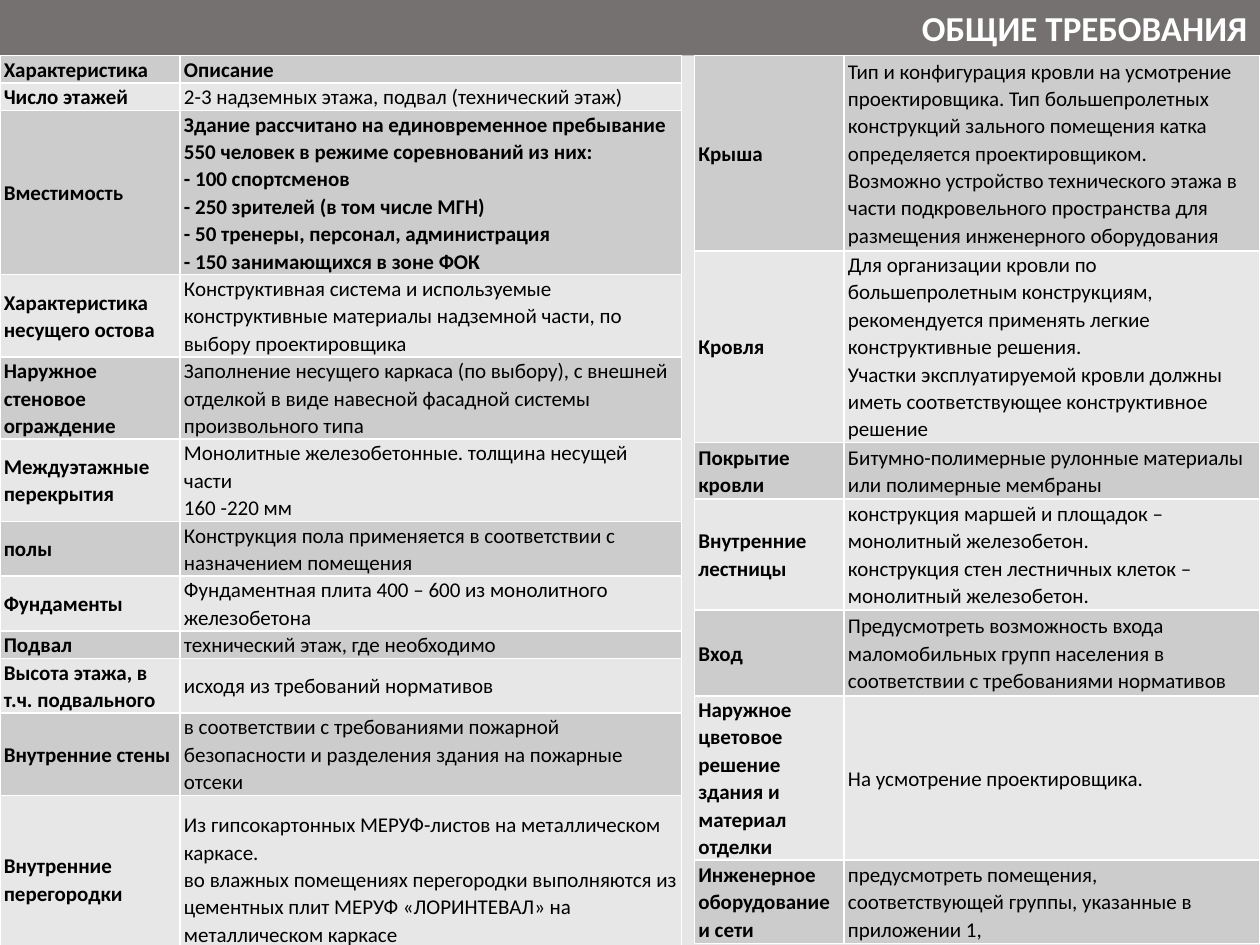
import pptx
import pptx.util
import pptx.dml.color
import pptx.enum.shapes
import pptx.enum.text
import pptx.oxml
import pptx.oxml.ns

Pt = pptx.util.Pt
COLORS = {
    "page": "E7E6E6",
    "banner": "767171",
    "dark_band": "CCCCCC",
    "light_band": "E7E7E7",
    "text": "000000",
    "white": "FFFFFF",
}
LINE = 15.4
TOP = 31.7

BUILDING_ROWS = [
    (1, "Характеристика", "Описание"),
    (1, "Число этажей", "2-3 надземных этажа, подвал (технический этаж)"),
    (6, "Вместимость",
     "Здание рассчитано на единовременное пребывание 550 человек в режиме соревнований из них:\n"
     "- 100 спортсменов\n"
     "- 250 зрителей (в том числе МГН)\n"
     "- 50 тренеры, персонал, администрация\n"
     "- 150 занимающихся в зоне ФОК"),
    (3, "Характеристика несущего остова",
     "Конструктивная система и используемые конструктивные материалы надземной части, "
     "по выбору проектировщика"),
    (3, "Наружное стеновое ограждение",
     "Заполнение несущего каркаса (по выбору), с внешней отделкой в виде навесной "
     "фасадной системы произвольного типа"),
    (3, "Междуэтажные перекрытия",
     "Монолитные железобетонные. толщина несущей части\n160 -220 мм"),
    (2, "полы", "Конструкция пола применяется в соответствии с назначением помещения"),
    (2, "Фундаменты", "Фундаментная плита 400 – 600 из монолитного железобетона"),
    (1, "Подвал", "технический этаж, где необходимо"),
    (2, "Высота этажа, в т.ч. подвального", "исходя из требований нормативов"),
    (3, "Внутренние стены",
     "в соответствии с требованиями пожарной безопасности и разделения здания "
     "на пожарные отсеки"),
    (6.25, "Внутренние перегородки",
     "Из гипсокартонных МЕРУФ-листов на металлическом\n"
     "каркасе.\n"
     "во влажных помещениях перегородки выполняются из цементных плит "
     "МЕРУФ «ЛОРИНТЕВАЛ» на металлическом каркасе"),
]

ROOF_ROWS = [
    (111.6, "Крыша",
     "Тип и конфигурация кровли на усмотрение проектировщика. Тип большепролетных "
     "конструкций зального помещения катка определяется проектировщиком.\n"
     "Возможно устройство технического этажа в части подкровельного пространства "
     "для размещения инженерного оборудования"),
    (108, "Кровля",
     "Для организации кровли по большепролетным конструкциям, рекомендуется применять "
     "легкие конструктивные решения.\n"
     "Участки эксплуатируемой кровли должны иметь соответствующее конструктивное решение"),
    (32.4, "Покрытие кровли",
     "Битумно-полимерные рулонные материалы\nили полимерные мембраны"),
    (63.4, "Внутренние лестницы",
     "конструкция маршей и площадок – монолитный железобетон.\n"
     "конструкция стен лестничных клеток – монолитный железобетон."),
    (49, "Вход",
     "Предусмотреть возможность входа\n"
     "маломобильных групп населения в соответствии с требованиями нормативов"),
    (92, "Наружное цветовое решение здания и материал отделки",
     "На усмотрение проектировщика."),
    (47.5, "Инженерное оборудование и сети",
     "предусмотреть помещения, соответствующей группы, указанные в приложении 1,"),
]


class RequirementsPage:
    font = "Calibri"

    def __init__(self, deck):
        self.page = deck.slides.add_slide(deck.slide_layouts[6])
        self.paint(self.page.background.fill, "page")

    def color(self, name):
        return pptx.dml.color.RGBColor.from_string(COLORS[name])

    def paint(self, fill, name):
        fill.solid()
        fill.fore_color.rgb = self.color(name)

    def style(self, para, size, color, bold):
        for span in para.runs:
            span.font.name = self.font
            span.font.size = Pt(size)
            span.font.bold = bold
            span.font.color.rgb = self.color(color)

    def banner(self, text, width, height):
        box = self.page.shapes.add_shape(
            pptx.enum.shapes.MSO_SHAPE.RECTANGLE, Pt(0), Pt(0), Pt(width), Pt(height))
        box.shadow.inherit = False
        box.line.fill.background()
        self.paint(box.fill, "banner")
        box.text_frame.text = text
        box.text_frame.word_wrap = True
        box.text_frame.vertical_anchor = pptx.enum.text.MSO_ANCHOR.MIDDLE
        para = box.text_frame.paragraphs[0]
        para.alignment = pptx.enum.text.PP_ALIGN.RIGHT
        self.style(para, 20, "white", True)

    def borders(self, cell):
        properties = cell._tc.get_or_add_tcPr()
        for index, side in enumerate("LRTB"):
            properties.insert(index, pptx.oxml.parse_xml(
                f'<a:ln{side} {pptx.oxml.ns.nsdecls("a")} w="{Pt(1)}"><a:solidFill>'
                f'<a:srgbClr val="{COLORS["white"]}"/></a:solidFill></a:ln{side}>'))

    def cell(self, cell, text, band, bold):
        cell.text_frame.text = text
        cell.vertical_anchor = pptx.enum.text.MSO_ANCHOR.MIDDLE
        cell.margin_left = cell.margin_right = Pt(2.16)
        cell.margin_top = cell.margin_bottom = Pt(0)
        for para in cell.text_frame.paragraphs:
            para.line_spacing = 1.07
            self.style(para, 12, "text", bold)
        self.paint(cell.fill, band)
        self.borders(cell)

    def table(self, left, top, widths, rows, unit=1, bold_rows=()):
        heights = [row[0] * unit for row in rows]
        table = self.page.shapes.add_table(
            len(rows), len(widths), Pt(left), Pt(top), Pt(sum(widths)), Pt(sum(heights))).table
        table.first_row = False
        table.horz_banding = False
        for column, width in zip(table.columns, widths):
            column.width = Pt(width)
        for index, (_, label, description) in enumerate(rows):
            table.rows[index].height = Pt(heights[index])
            band = "light_band" if index % 2 else "dark_band"
            self.cell(table.cell(index, 0), label, band, True)
            self.cell(table.cell(index, 1), description, band, index in bold_rows)


def main():
    deck = pptx.Presentation()
    deck.slide_width = Pt(720)
    deck.slide_height = Pt(540)
    page = RequirementsPage(deck)
    page.banner("ОБЩИЕ ТРЕБОВАНИЯ", 720, TOP)
    page.table(0, TOP, (103, 286.5), BUILDING_ROWS, LINE, bold_rows=(0, 2))
    page.table(396.9, TOP, (85.5, 237.6), ROOF_ROWS)
    deck.save("out.pptx")


if __name__ == "__main__":
    main()
